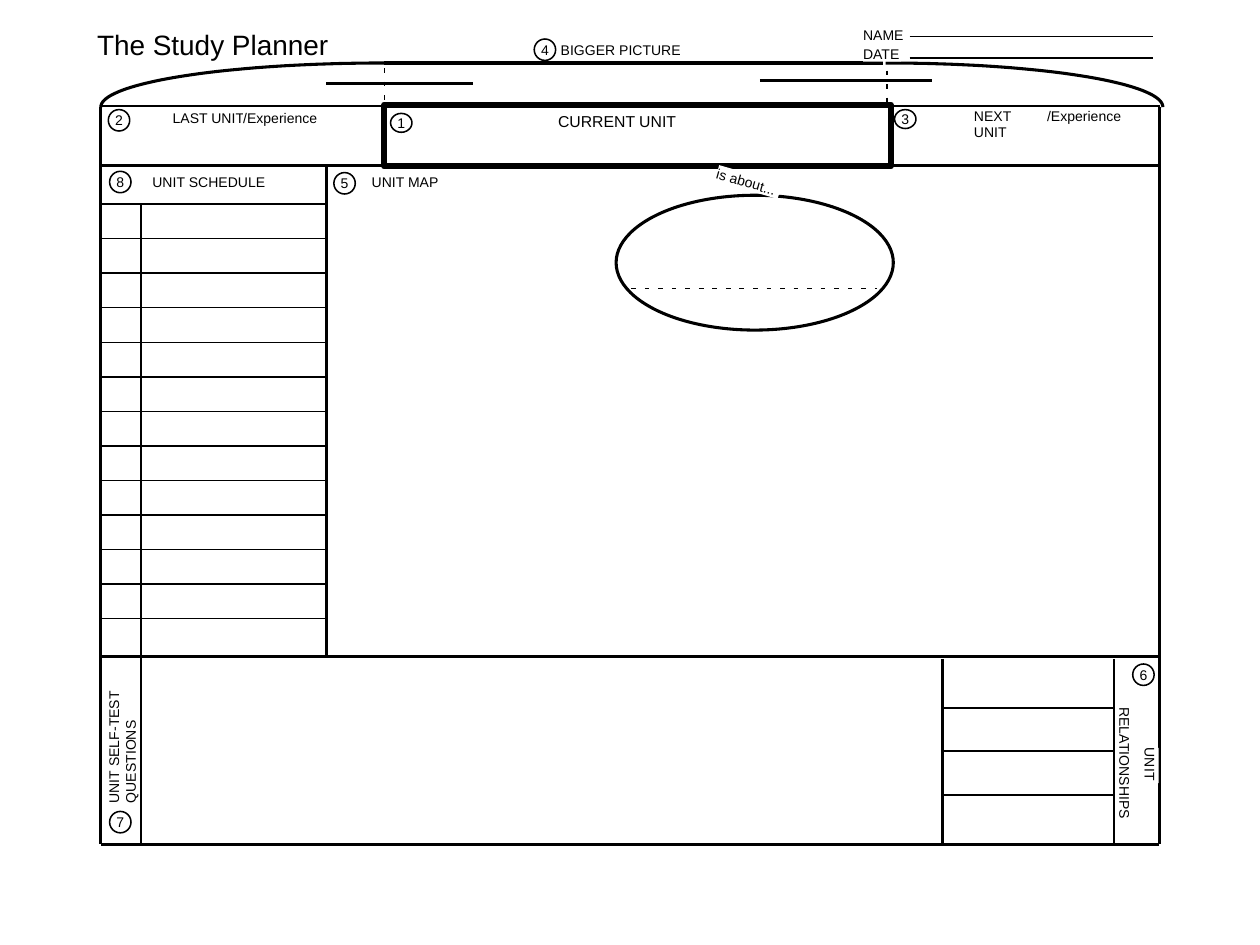
from dataclasses import dataclass
from math import cos, pi, sin
from typing import Any

from lxml.etree import SubElement as sub
from pptx import Presentation
from pptx.dml.color import RGBColor
from pptx.enum.shapes import MSO_CONNECTOR as Link, MSO_SHAPE as Kind
from pptx.enum.text import MSO_ANCHOR as Anchor, PP_ALIGN as Align
from pptx.oxml.ns import qn
from pptx.util import Inches, Pt


def color(code):
    return RGBColor.from_string(code)


def write(shape, text, size=8, font="Arial", ink="000000", wrap=False,
          align=Align.LEFT, anchor=Anchor.TOP):
    frame = shape.text_frame
    frame.margin_left = frame.margin_right = 0
    frame.margin_top = frame.margin_bottom = 0
    frame.word_wrap = wrap
    frame.vertical_anchor = anchor
    para = frame.paragraphs[0]
    para.alignment = align
    run = para.add_run()
    run.text = text
    run.font.size = Pt(size)
    run.font.name = font
    run.font.color.rgb = color(ink)


@dataclass
class Sheet:
    slide: Any
    ink: str = "000000"
    paper: str = "FFFFFF"
    thin: float = 0.88
    thick: float = 1.75
    heavy: float = 3.38

    def paint(self, shape):
        shape.fill.solid()
        shape.fill.fore_color.rgb = color(self.paper)

    def pen(self, shape, width):
        shape.line.color.rgb = color(self.ink)
        shape.line.width = Pt(width)

    def title(self, text, *at):
        shape = self.slide.shapes.title
        shape.left, shape.top, shape.width, shape.height = map(Inches, at)
        self.paint(shape)
        write(shape, text, size=16)

    def line(self, x1, y1, x2, y2, width=None, dash=False):
        ends = map(Inches, (x1, y1, x2, y2))
        line = self.slide.shapes.add_connector(Link.STRAIGHT, *ends)
        self.pen(line, width or self.thin)
        props = line._element.spPr
        if dash:
            style = sub(props.get_or_add_ln(), qn("a:custDash"))
            sub(style, qn("a:ds"), d="300000", sp="580000")
        sub(props, qn("a:effectLst"))

    def box(self, x, y, w, h, kind=Kind.RECTANGLE, width=None):
        shape = self.slide.shapes.add_shape(kind, *map(Inches, (x, y, w, h)))
        shape.shadow.inherit = False
        self.paint(shape)
        if width:
            self.pen(shape, width)
        else:
            shape.line.fill.background()
        return shape

    def label(self, text, x, y, w, h=0.13, turn=0, **form):
        shape = self.box(x, y, w, h)
        shape.rotation = turn
        write(shape, text, **form)

    def badge(self, text, x, y, h=0.17):
        shape = self.box(x, y, 0.17, h, Kind.OVAL, self.thin)
        write(shape, text, align=Align.CENTER, anchor=Anchor.MIDDLE)

    def arc(self, x, y, wide, high, steps=40):
        turns = [pi / 2 * i / steps for i in range(steps + 1)]
        dots = [(Inches(x + wide * cos(t)), Inches(y - high * sin(t)))
                for t in turns]
        path = self.slide.shapes.build_freeform(*dots[0])
        path.add_line_segments(dots[1:], close=False)
        shape = path.convert_to_shape()
        shape.shadow.inherit = False
        shape.fill.background()
        self.pen(shape, self.thick)


def main():
    deck = Presentation()
    deck.slide_width, deck.slide_height = Inches(10), Inches(7.5)
    sheet = Sheet(deck.slides.add_slide(deck.slide_layouts[5]))
    thick = sheet.thick

    sheet.title("The Study Planner", 0.77, 0.22, 2.05, 0.27)
    sheet.box(4.89, 1.55, 2.2, 1.07, Kind.OVAL, thick)
    sheet.line(5.01, 2.29, 6.96, 2.29, dash=True)

    sheet.arc(3.05, 0.85, -2.25, 0.35)
    sheet.arc(7.03, 0.85, 2.2, 0.35)
    sheet.line(3.05, 0.54, 3.05, 0.8, dash=True)
    sheet.line(7.04, 0.56, 7.04, 0.81, dash=True)

    for ends in (
        (3.05, 0.5, 7.01, 0.5),
        (2.59, 0.66, 3.75, 0.66),
        (6.03, 0.64, 7.4, 0.64),
        (0.8, 1.31, 9.2, 1.31),
        (0.8, 5.21, 9.2, 5.21),
        (0.8, 6.7, 9.2, 6.7),
        (0.8, 0.85, 0.8, 6.7),
        (9.2, 0.85, 9.2, 6.7),
        (2.59, 1.32, 2.59, 5.21),
        (7.48, 5.23, 7.48, 6.69),
    ):
        sheet.line(*ends, width=thick)

    for ends in (
        (7.22, 0.29, 9.15, 0.29),
        (7.22, 0.46, 9.15, 0.46),
        (0.8, 0.84, 9.21, 0.84),
        (1.12, 1.62, 1.12, 6.69),
        (8.84, 5.23, 8.84, 6.69),
    ):
        sheet.line(*ends)

    rows, first, last = 13, 1.62, 4.91
    for i in range(rows):
        y = first + (last - first) * i / (rows - 1)
        sheet.line(0.81, y, 2.59, y)
    for y in (5.62, 5.96, 6.31):
        sheet.line(7.49, y, 8.84, y)

    sheet.box(3.05, 0.83, 4.02, 0.49, width=sheet.heavy)

    for text, x, y, w in (
        ("NAME", 6.85, 0.21, 0.33),
        ("DATE", 6.85, 0.36, 0.3),
        ("BIGGER PICTURE", 4.45, 0.33, 0.96),
        ("LAST UNIT", 1.37, 0.87, 0.58),
        ("/Experience", 1.93, 0.87, 0.59),
        ("/Experience", 8.31, 0.85, 0.59),
        ("UNIT SCHEDULE", 1.21, 1.38, 0.9),
        ("UNIT MAP", 2.95, 1.38, 0.54),
    ):
        sheet.label(text, x, y, w)
    sheet.label("NEXT UNIT", 7.73, 0.85, 0.4, 0.27, wrap=True)
    sheet.label("CURRENT UNIT", 4.43, 0.89, 0.94, 0.15, size=9)
    sheet.label("is about...", 5.68, 1.38, 0.52, turn=16)
    sheet.label("UNIT SELF-TEST QUESTIONS", 0.41, 5.68, 1.12, 0.27,
                turn=270, wrap=True)
    sheet.label("UNIT", 8.99, 6.01, 0.28, turn=90)
    sheet.label("RELATIONSHIPS", 8.48, 6, 0.9, turn=90)

    for spot in (
        ("1", 3.1, 0.9, 0.15),
        ("2", 0.86, 0.87),
        ("3", 7.1, 0.87, 0.15),
        ("4", 4.24, 0.31),
        ("5", 2.65, 1.37),
        ("6", 8.99, 5.27),
        ("7", 0.87, 6.44),
        ("8", 0.87, 1.36),
    ):
        sheet.badge(*spot)

    deck.save("out.pptx")


if __name__ == "__main__":
    main()
